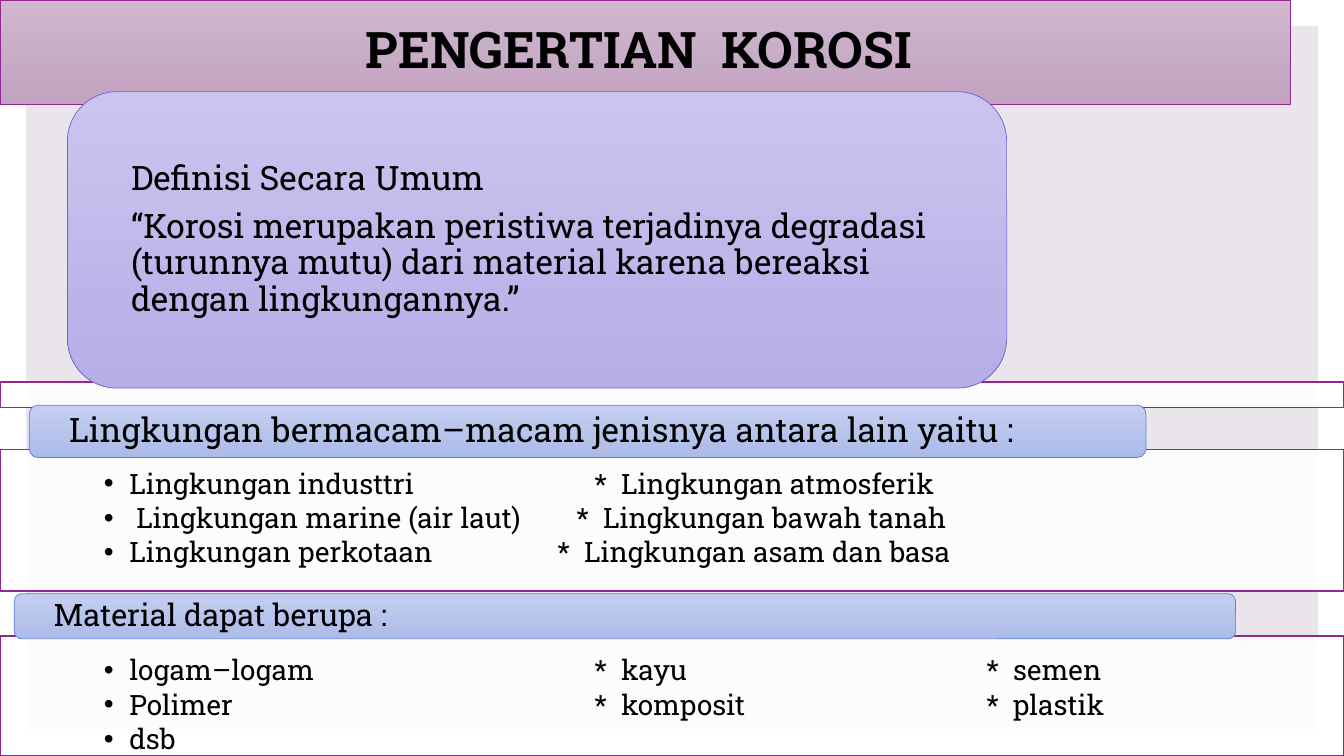
from lxml import etree
from pptx import Presentation
from pptx.dml.color import RGBColor
from pptx.enum import shapes, text
from pptx.oxml import ns
from pptx.util import Cm, Pt

FONT = "Roboto Slab"
BLACK = RGBColor(0x00, 0x00, 0x00)
WHITE = RGBColor(0xFF, 0xFF, 0xFF)
BACKDROP = RGBColor(0xEA, 0xE5, 0xEB)
PLUM = RGBColor(0x92, 0x27, 0x8F)
MAUVE = (RGBColor(0xCF, 0xB7, 0xCE), RGBColor(0xC2, 0xA3, 0xC0))
VIOLET = (RGBColor(0xCA, 0xC5, 0xEF), RGBColor(0xB6, 0xAE, 0xE7))
VIOLET_LINE = RGBColor(0x75, 0x5D, 0xD9)
BLUE = (RGBColor(0xC4, 0xCE, 0xF0), RGBColor(0xAD, 0xBB, 0xE8))
BLUE_LINE = RGBColor(0x59, 0x82, 0xDB)

SLIDE_WIDTH, SLIDE_HEIGHT = 33.87, 19.05
TITLE_BOX = (0, 0, 32.51, 2.62)
BACKDROP_BOX = (0.66, 0.66, 32.56, 17.73)
STRIP_BOX = (0, 9.63, SLIDE_WIDTH, 0.64)
DEFINITION_BOX = (1.7, 2.31, 23.67, 7.47)
HANGING = 0.64

DEFINITION = [
    "Definisi Secara Umum",
    "“Korosi merupakan peristiwa terjadinya degradasi (turunnya mutu) "
    "dari material karena bereaksi dengan lingkungannya.”",
]
ENVIRONMENTS = [
    (["Lingkungan industtri", "*  Lingkungan atmosferik"], [12.35]),
    ([" Lingkungan marine (air laut)", "*  Lingkungan bawah tanah"], [11.9]),
    (["Lingkungan perkotaan", "*  Lingkungan asam dan basa"], [11.42]),
]
MATERIALS = [
    (["logam–logam", "*  kayu", "*  semen"], [12.35, 22.23]),
    (["Polimer", "*  komposit", "*  plastik"], [12.35, 22.23]),
    (["dsb"], []),
]


def place(shape, box):
    """Move a shape to a box of left, top, width and height in centimetres."""
    shape.left, shape.top, shape.width, shape.height = map(Cm, box)


def add_box(slide, kind, box):
    """Add a preset shape without a shadow."""
    shape = slide.shapes.add_shape(kind, *map(Cm, box))
    shape.shadow.inherit = False
    return shape


def paint_gradient(shape, colours, line_colour):
    """Fill a shape from top to bottom and give it a thin outline."""
    shape.fill.gradient()
    shape.fill.gradient_angle = 270
    for stop, colour in zip(shape.fill.gradient_stops, colours):
        stop.color.rgb = colour
    shape.line.color.rgb = line_colour
    shape.line.width = Pt(0.5)


def paint_panel(shape):
    """Give a shape a nearly opaque white fill and a plum outline."""
    shape.fill.solid()
    shape.fill.fore_color.rgb = WHITE
    colour = shape.element.spPr.find(".//" + ns.qn("a:srgbClr"))
    etree.SubElement(colour, ns.qn("a:alpha"), val="90000")
    shape.line.color.rgb = PLUM
    shape.line.width = Pt(1)


def set_frame(shape, anchor, left, top=0, bottom=0):
    """Set wrapping, anchor and margins of a text frame."""
    frame = shape.text_frame
    frame.word_wrap = True
    frame.auto_size = text.MSO_AUTO_SIZE.NONE
    frame.vertical_anchor = anchor
    frame.margin_left = frame.margin_right = Cm(left)
    frame.margin_top, frame.margin_bottom = Cm(top), Cm(bottom)
    return frame


def style_paragraph(paragraph, size, space_after=0.0, align=text.PP_ALIGN.LEFT, bold=False):
    """Set font, spacing and alignment of a paragraph."""
    paragraph.alignment = align
    paragraph.line_spacing = 0.9
    paragraph.space_before = Pt(0)
    paragraph.space_after = Pt(size * space_after)
    paragraph.font.name = FONT
    paragraph.font.size = Pt(size)
    paragraph.font.bold = bold
    paragraph.font.color.rgb = BLACK


def set_columns(paragraph, stops):
    """Give a list paragraph its hanging indent and tab stops."""
    properties = paragraph._p.get_or_add_pPr()
    properties.set("marL", str(Cm(HANGING)))
    properties.set("indent", str(-Cm(HANGING)))
    if stops:
        tabs = etree.SubElement(properties, ns.qn("a:tabLst"))
        for stop in stops:
            etree.SubElement(tabs, ns.qn("a:tab"), pos=str(Cm(stop)), algn="l")


def add_title(slide, box):
    """Fill the title bar and put the backdrop behind it."""
    title = slide.shapes.title
    place(title, box)
    paint_gradient(title, MAUVE, PLUM)
    frame = set_frame(title, text.MSO_ANCHOR.MIDDLE, 0.25)
    frame.text = "PENGERTIAN  KOROSI "
    style_paragraph(frame.paragraphs[0], 36, align=text.PP_ALIGN.CENTER, bold=True)
    backdrop = add_box(slide, shapes.MSO_SHAPE.RECTANGLE, BACKDROP_BOX)
    backdrop.fill.solid()
    backdrop.fill.fore_color.rgb = BACKDROP
    backdrop.line.fill.background()
    title.element.addprevious(backdrop.element)


def add_card(slide, box, lines, size, margin, colours, line_colour):
    """Add a rounded card with left-aligned paragraphs."""
    card = add_box(slide, shapes.MSO_SHAPE.ROUNDED_RECTANGLE, box)
    paint_gradient(card, colours, line_colour)
    frame = set_frame(card, text.MSO_ANCHOR.MIDDLE, margin)
    frame.text = "\n".join(lines)
    for paragraph in frame.paragraphs:
        style_paragraph(paragraph, size, 0.35)


def add_section(slide, body, top, height, rows, heading, heading_box, size):
    """Fill a list panel across the slide and lay its heading on the top edge."""
    place(body, (0, top, SLIDE_WIDTH, height))
    paint_panel(body)
    frame = set_frame(body, text.MSO_ANCHOR.TOP, 2.62, 0.51, 0.38)
    frame.text = "\n".join("\t".join(cells) for cells, _ in rows)
    for paragraph, (_, stops) in zip(frame.paragraphs, rows):
        set_columns(paragraph, stops)
        style_paragraph(paragraph, 20, 0.15)
    left, rise, width, heading_height = heading_box
    add_card(slide, (left, top - rise, width, heading_height), [heading], size, 0.94, BLUE, BLUE_LINE)


def main():
    """Build the slide and save it."""
    presentation = Presentation()
    presentation.slide_width, presentation.slide_height = Cm(SLIDE_WIDTH), Cm(SLIDE_HEIGHT)
    slide = presentation.slides.add_slide(presentation.slide_layouts[3])
    _, environments, materials = slide.placeholders
    add_title(slide, TITLE_BOX)
    paint_panel(add_box(slide, shapes.MSO_SHAPE.RECTANGLE, STRIP_BOX))
    add_card(slide, DEFINITION_BOX, DEFINITION, 24, 1.24, VIOLET, VIOLET_LINE)
    add_section(slide, environments, 11.33, 3.56, ENVIRONMENTS,
                "Lingkungan bermacam–macam jenisnya antara lain yaitu :", (0.74, 1.12, 28.14, 1.32), 24)
    add_section(slide, materials, 16.03, 3.02, MATERIALS,
                "Material dapat berupa :", (0.36, 1.07, 30.78, 1.14), 22)
    presentation.save("out.pptx")


if __name__ == "__main__":
    main()
